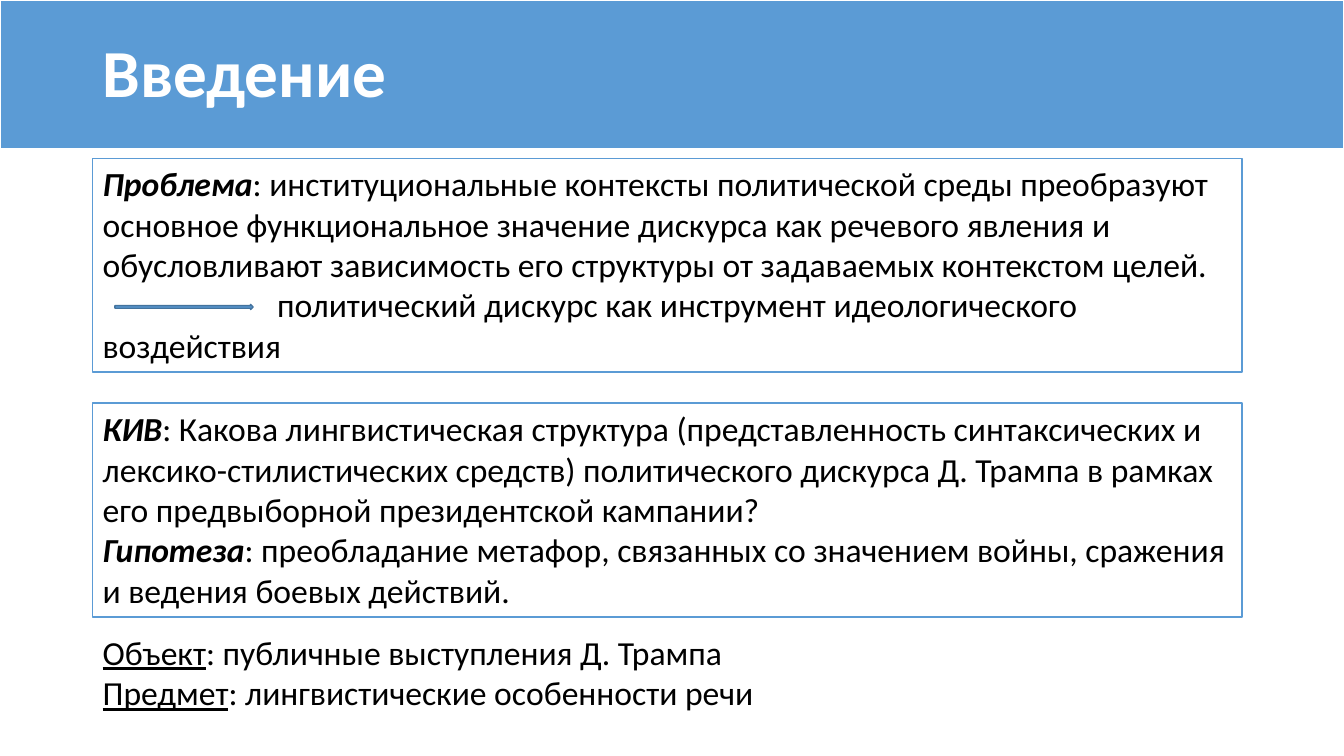
from dataclasses import dataclass

from pptx import Presentation
from pptx import util as u
from pptx.dml.color import RGBColor
from pptx.enum import shapes, text

WIDE, HIGH = u.Inches(13.33), u.Inches(7.5)


@dataclass(frozen=True)
class Theme:
    """Colours, font and type sizes of the slide."""
    blue: str = "5B9BD5"
    edge: str = "43739E"
    white: str = "FFFFFF"
    ink: str = "000000"
    font: str = "Calibri"
    head: int = 48
    body: int = 24


LOOK = Theme()
LEFT, SPAN = 6.9, 85.5
BAND, CARD = 19.73, 28.27


def place(left, top, width, height):
    """Turn percent shares of the slide into lengths."""
    return [int(side * share / 100) for side, share in
            zip((WIDE, HIGH, WIDE, HIGH), (left, top, width, height))]


def add_form(slide, kind, area, fill, line):
    """Add a filled and outlined preset shape."""
    form = slide.shapes.add_shape(kind, *place(*area))
    form.shadow.inherit = False
    form.fill.solid()
    form.fill.fore_color.rgb = RGBColor.from_string(fill)
    form.line.color.rgb = RGBColor.from_string(line)
    form.line.width = u.Pt(1)
    return form


def add_run(para, words, style="", size=LOOK.body, tint=LOOK.ink):
    """Add one run; the style holds the letters b, i or u."""
    run = para.add_run()
    run.text = words
    font = run.font
    font.name, font.size = LOOK.font, u.Pt(size)
    font.color.rgb = RGBColor.from_string(tint)
    font.bold, font.italic, font.underline = (mark in style for mark in "biu")


def write(form, paras, anchor=text.MSO_ANCHOR.TOP, **look):
    """Fill a shape with paragraphs given as lists of runs."""
    frame = form.text_frame
    frame.word_wrap = True
    frame.vertical_anchor = anchor
    for spot, runs in enumerate(paras):
        para = frame.add_paragraph() if spot else frame.paragraphs[0]
        para.alignment = text.PP_ALIGN.LEFT
        for run in runs:
            add_run(para, *run, **look)
    return frame.paragraphs


def add_card(slide, top, paras):
    """Add an outlined card with text."""
    card = add_form(slide, shapes.MSO_SHAPE.RECTANGLE,
                    (LEFT, top, SPAN, CARD), LOOK.white, LOOK.blue)
    return write(card, paras)


def add_note(slide, area, paras, **look):
    """Add a plain text box."""
    note = slide.shapes.add_textbox(*place(*area))
    return write(note, paras, **look)


def main():
    """Build the introduction slide and save it."""
    deck = Presentation()
    deck.slide_width, deck.slide_height = WIDE, HIGH
    slide = deck.slides.add_slide(deck.slide_layouts[6])

    add_form(slide, shapes.MSO_SHAPE.RECTANGLE, (0, 0, 100, BAND),
             LOOK.blue, LOOK.white)
    title = add_note(slide, (LEFT, 0.4, 86.25, 19.33), [[("Введение", "b")]],
                     anchor=text.MSO_ANCHOR.MIDDLE,
                     size=LOOK.head, tint=LOOK.white)
    title[0].line_spacing = 0.9

    issue = add_card(slide, 20.95, [
        [("Проблема", "bi"),
         (": институциональные контексты политической среды преобразуют",)],
        [("основное функциональное значение дискурса как речевого явления и "
          "обусловливают зависимость его структуры от задаваемых контекстом "
          "целей.",)],
        [("политический дискурс как инструмент идеологического "
          "воздействия",)],
    ])
    issue[-1]._p.get_or_add_pPr().set("indent", str(u.Inches(1.73)))

    add_card(slide, 53.33, [
        [("КИВ", "bi"),
         (": Какова лингвистическая структура (представленность "
          "синтаксических и",)],
        [("лексико-стилистических средств) политического дискурса "
          "Д. Трампа в рамках",)],
        [("его предвыборной президентской кампании?",)],
        [("Гипотеза", "bi"),
         (": преобладание метафор, связанных со значением войны, сражения "
          "и ведения боевых действий.",)],
    ])

    add_note(slide, (LEFT, 82.93, 51.6, 12.13), [
        [("Объект", "u"), (": публичные выступления Д. Трампа",)],
        [("Предмет", "u"), (": лингвистические особенности речи",)],
    ])
    add_form(slide, shapes.MSO_SHAPE.RIGHT_ARROW, (8.55, 40.27, 10.28, 0.67),
             LOOK.blue, LOOK.edge)
    deck.save("out.pptx")


if __name__ == "__main__":
    main()
